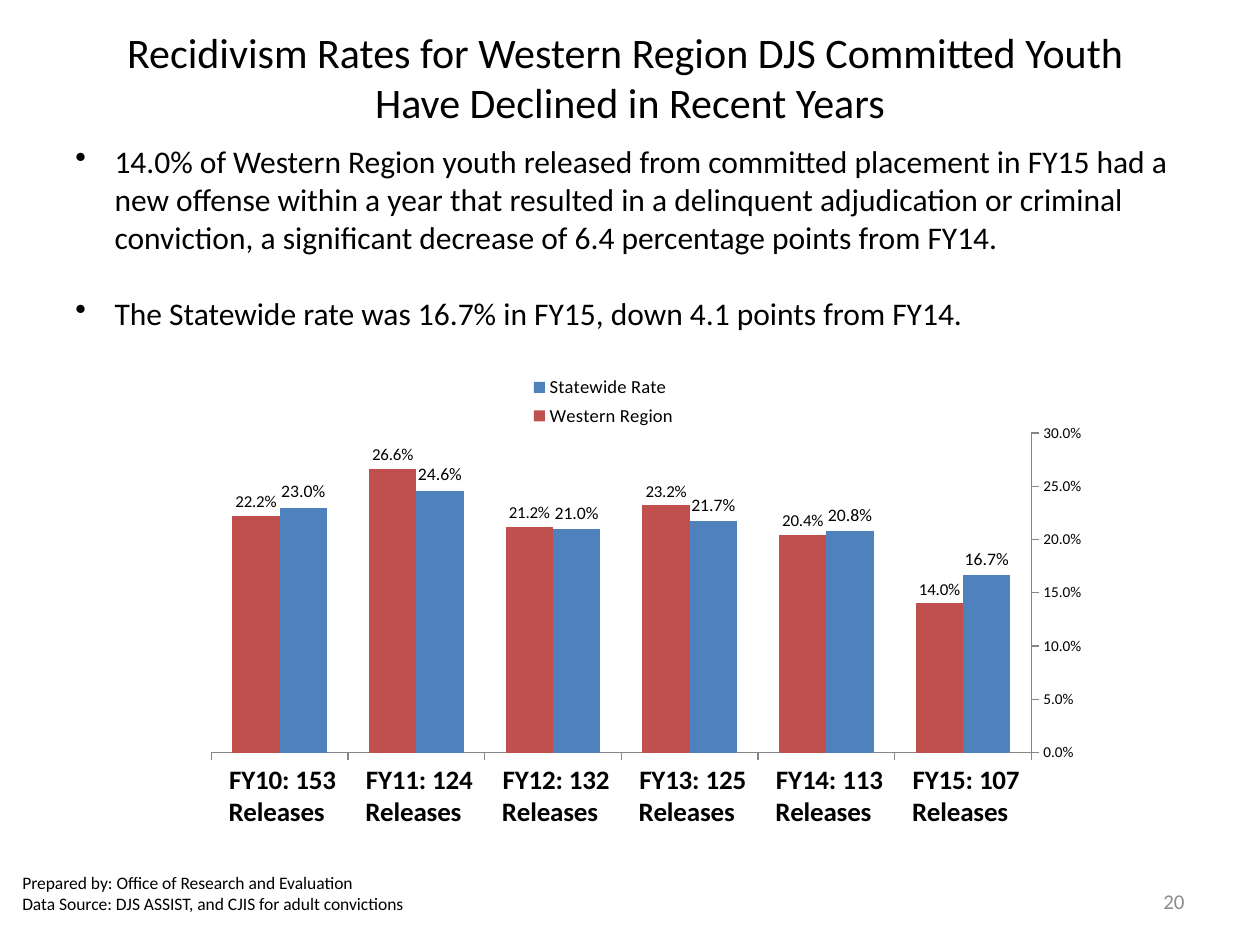
from lxml.etree import SubElement
from pptx import Presentation
from pptx.chart.data import CategoryChartData
from pptx.dml.color import RGBColor
from pptx.enum.chart import (XL_AXIS_CROSSES as Crosses, XL_CHART_TYPE as ChartType,
                             XL_LABEL_POSITION as LabelPosition,
                             XL_LEGEND_POSITION as LegendPosition,
                             XL_TICK_MARK as TickMark)
from pptx.enum.text import MSO_ANCHOR as Anchor, PP_ALIGN as Align
from pptx.oxml.ns import qn
from pptx.util import Cm, Pt

FONT = "Calibri"
BLACK = "000000"
GRAY = "8C8C8C"
RELEASES = {15: 107, 14: 113, 13: 125, 12: 132, 11: 124, 10: 153}
RATES = [
    ("Statewide Rate", "4F81BD", 10.5, (0.167, 0.208, 0.217, 0.21, 0.246, 0.23)),
    ("Western Region", "C0504D", 10, (0.14, 0.204, 0.232, 0.212, 0.266, 0.222)),
]


def color(value):
    return RGBColor.from_string(value)


def style_font(font, size, value=BLACK, bold=False):
    font.name = FONT
    font.size = Pt(size)
    font.bold = bold
    font.color.rgb = color(value)


def add_text(slide, box, lines, size, value=BLACK, align=Align.LEFT):
    frame = slide.shapes.add_textbox(*map(Cm, box)).text_frame
    frame.word_wrap = True
    frame.vertical_anchor = Anchor.MIDDLE
    for index, line in enumerate(lines):
        paragraph = frame.add_paragraph() if index else frame.paragraphs[0]
        paragraph.text = line
        paragraph.alignment = align
        style_font(paragraph.font, size, value)
    return frame.paragraphs


def add_bullets(slide, box, lines):
    paragraphs = add_text(slide, box, lines, 18)
    for paragraph in paragraphs:
        properties = paragraph._p.get_or_add_pPr()
        properties.set("marL", str(Cm(0.79)))
        properties.set("indent", str(-Cm(0.79)))
        bullet = SubElement(properties, qn("a:buChar"), char="•")
        properties.insert(0, bullet)
    for paragraph in paragraphs[1:]:
        paragraph.space_before = Pt(22)


def set_layout(parent, position, x, y, width, height, inner=False):
    layout = parent.find(qn("c:layout"))
    if layout is None:
        layout = SubElement(parent, qn("c:layout"))
        parent.remove(layout)
        parent.insert(position, layout)
    for child in list(layout):
        layout.remove(child)
    manual = SubElement(layout, qn("c:manualLayout"))
    settings = [("layoutTarget", "inner")] if inner else []
    settings += [("xMode", "edge"), ("yMode", "edge"),
                 ("x", x), ("y", y), ("w", width), ("h", height)]
    for name, value in settings:
        SubElement(manual, qn(f"c:{name}"), val=str(value))


def style_axis(axis, size, bold=False):
    axis.has_major_gridlines = False
    axis.major_tick_mark = TickMark.OUTSIDE
    axis.minor_tick_mark = TickMark.NONE
    axis.format.line.color.rgb = color("868686")
    style_font(axis.tick_labels.font, size, bold=bold)


def add_rates_chart(slide, box):
    data = CategoryChartData(number_format="0.0%")
    data.categories = [f" FY{year}: {count} Releases " for year, count in RELEASES.items()]
    for name, _, _, values in RATES:
        data.add_series(name, values)
    chart = slide.shapes.add_chart(ChartType.COLUMN_CLUSTERED, *map(Cm, box), data).chart
    chart.has_title = False
    style_font(chart.font, 10)

    style_axis(chart.category_axis, 16, bold=True)
    chart.category_axis.reverse_order = True
    chart.category_axis.crosses = Crosses.MAXIMUM
    values_axis = chart.value_axis
    style_axis(values_axis, 9)
    values_axis.minimum_scale = 0
    values_axis.maximum_scale = 0.3
    values_axis.major_unit = 0.05
    values_axis.tick_labels.number_format = "0.0%"
    values_axis.tick_labels.number_format_is_linked = False

    plot = chart.plots[0]
    plot.gap_width = 89
    plot.overlap = 0
    plot.vary_by_categories = False
    for series, (_, fill, size, _) in zip(plot.series, RATES):
        series.format.fill.solid()
        series.format.fill.fore_color.rgb = color(fill)
        labels = series.data_labels
        labels.show_value = True
        labels.position = LabelPosition.OUTSIDE_END
        labels.number_format = "0.0%"
        labels.number_format_is_linked = False
        style_font(labels.font, size)

    chart.has_legend = True
    legend = chart.legend
    legend.position = LegendPosition.RIGHT
    legend.include_in_layout = False
    style_font(legend.font, 11)
    set_layout(legend._element, 1, 0.41, 0.03, 0.18, 0.14)
    set_layout(chart._chartSpace.chart.plotArea, 0, 0.06, 0.17, 0.92, 0.71, inner=True)


def main():
    presentation = Presentation()
    presentation.slide_width = Cm(25.4)
    presentation.slide_height = Cm(19.05)
    slide = presentation.slides.add_slide(presentation.slide_layouts[6])

    add_text(slide, (0, 0.76, 25.4, 1.57),
             ["Recidivism Rates for Western Region DJS Committed Youth \v"
              "Have Declined in Recent Years"], 24, align=Align.CENTER)
    add_bullets(slide, (1.27, 2.97, 23.06, 3.61), [
        "14.0% of Western Region youth released from committed placement in FY15 had a "
        "new offense within a year that resulted in a delinquent adjudication or criminal "
        "conviction, a significant decrease of 6.4 percentage points from FY14.",
        "The Statewide rate was 16.7% in FY15, down 4.1 points from FY14.",
    ])
    add_rates_chart(slide, (3.18, 7.19, 18.62, 9.53))
    add_text(slide, (0.2, 17.35, 8.69, 1.32), [
        "Prepared by: Office of Research and Evaluation",
        "Data Source:\u00a0DJS ASSIST, and CJIS for adult convictions".replace("\u00a0", " "),
    ], 10)
    add_text(slide, (18.21, 17.65, 5.92, 1.02), ["20"], 12, GRAY, Align.RIGHT)
    presentation.save("out.pptx")


if __name__ == "__main__":
    main()
